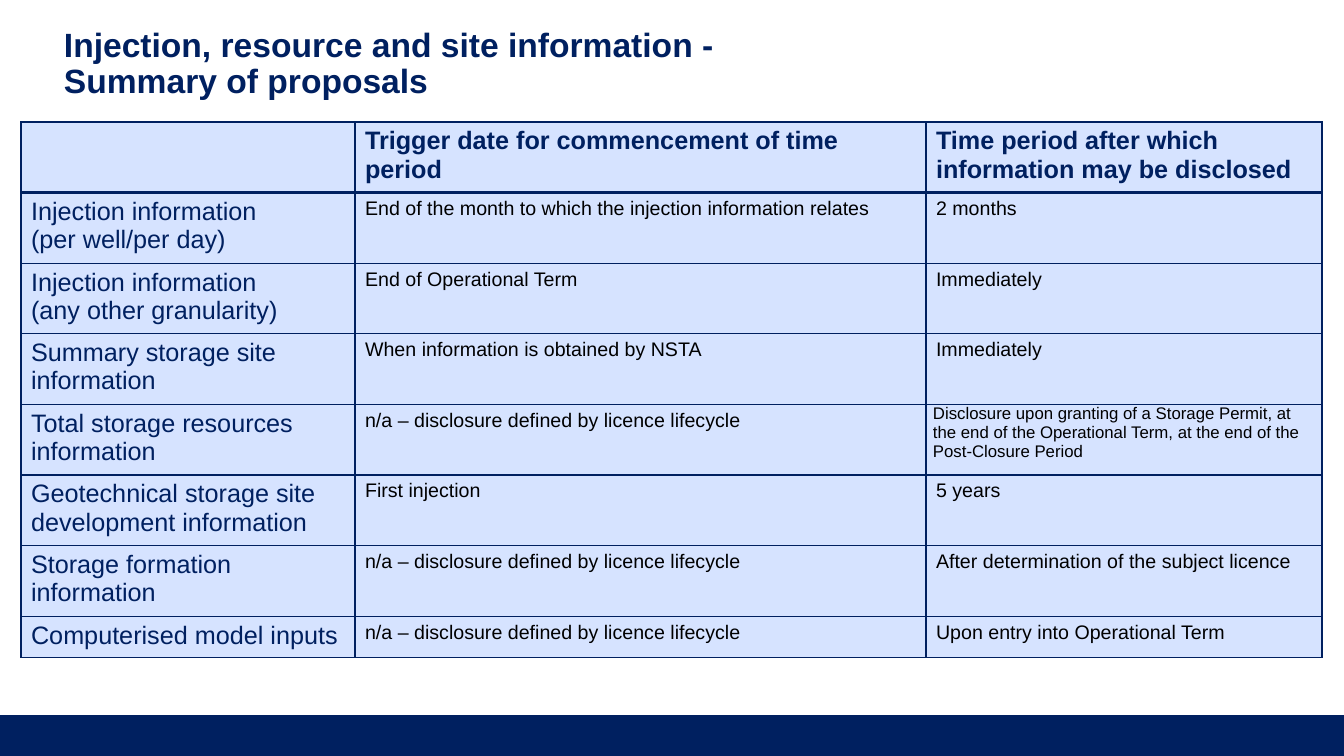
from pptx import Presentation
from pptx.util import Pt, Emu
from pptx.dml.color import RGBColor
from pptx.enum.shapes import MSO_SHAPE
from pptx.enum.text import MSO_ANCHOR
from pptx.oxml import parse_xml
from pptx.oxml.ns import nsdecls

# Content
TITLE = "Injection, resource and site information - Summary of proposals"
DEFINED = "n/a – disclosure defined by licence lifecycle"
ROWS = [
    ("", "Trigger date for commencement of time period",
     "Time period after which information may be disclosed"),
    ("Injection information \n(per well/per day)",
     "End of the month to which the injection information relates", "2 months"),
    ("Injection information \n(any other granularity)",
     "End of Operational Term", "Immediately"),
    ("Summary storage site information",
     "When information is obtained by NSTA", "Immediately"),
    ("Total storage resources information", DEFINED,
     "Disclosure upon granting of a Storage Permit, at the end of the "
     "Operational Term, at the end of the Post-Closure Period"),
    ("Geotechnical storage site development information",
     "First injection", "5 years"),
    ("Storage formation information", DEFINED,
     "After determination of the subject licence"),
    ("Computerised model inputs", DEFINED, "Upon entry into Operational Term"),
]
DENSE = (4, 2)  # cell with smaller text and tight margins

# Look
COLORS = {"navy": "002060", "pale": "D6E3FF", "black": "000000"}
FONT = "Arial"
WIDE, HIGH = 1344, 756
COLS = [334, 571, 396]
ROW = 41
BAND = 41


def px(n):
    return Emu(round(n * 914400 / 100.8))


def rgb(name):
    return RGBColor.from_string(COLORS[name])


def write(frame, text, size, color, bold=False):
    para = frame.paragraphs[0]
    for i, line in enumerate(text.split("\n")):
        if i:
            para.add_line_break()
        run = para.add_run()
        run.text = line
        font = run.font
        font.name, font.size, font.bold = FONT, Pt(size), bold
        font.color.rgb = rgb(color)
    return para


def border(cell, widths):
    props = cell._tc.get_or_add_tcPr()
    for i, (side, width) in enumerate(zip("LRTB", widths)):
        props.insert(i, parse_xml(
            f'<a:ln{side} {nsdecls("a")} w="{Pt(width)}"><a:solidFill>'
            f'<a:srgbClr val="{COLORS["navy"]}"/></a:solidFill></a:ln{side}>'))


deck = Presentation()
deck.slide_width, deck.slide_height = px(WIDE), px(HIGH)
slide = deck.slides.add_slide(deck.slide_layouts[6])
shapes = slide.shapes

# Footer band
band = shapes.add_shape(MSO_SHAPE.RECTANGLE, 0, px(HIGH - BAND), px(WIDE), px(BAND))
band.shadow.inherit = False
band.fill.solid()
band.fill.fore_color.rgb = rgb("navy")
band.line.fill.background()

# Title
frame = shapes.add_textbox(px(64), px(28), px(776), px(55)).text_frame
frame.word_wrap = True
frame.vertical_anchor = MSO_ANCHOR.TOP
frame.margin_left = frame.margin_top = 0
frame.margin_right, frame.margin_bottom = px(10), px(5)
write(frame, TITLE, 24, "navy", True).line_spacing = 0.9

# Table: rows grow to fit their text
table = shapes.add_table(len(ROWS), len(COLS), px(21), px(122),
                         px(sum(COLS)), px(ROW * len(ROWS))).table
table.first_row = table.horz_banding = False
for col, width in zip(table.columns, COLS):
    col.width = px(width)
for r, row in enumerate(ROWS):
    table.rows[r].height = px(ROW)
    for c, text in enumerate(row):
        cell = table.cell(r, c)
        cell.fill.solid()
        cell.fill.fore_color.rgb = rgb("pale")
        border(cell, (1, 1, 3 if r == 1 else 1, 3 if r == 0 else 1))
        if (r, c) == DENSE:
            cell.margin_left = cell.margin_right = px(7)
            cell.margin_top = cell.margin_bottom = 0
        if r == 0 or c == 0:
            write(cell.text_frame, text, 18, "navy", r == 0)
        else:
            write(cell.text_frame, text, 12 if (r, c) == DENSE else 14, "black")

deck.save("out.pptx")
